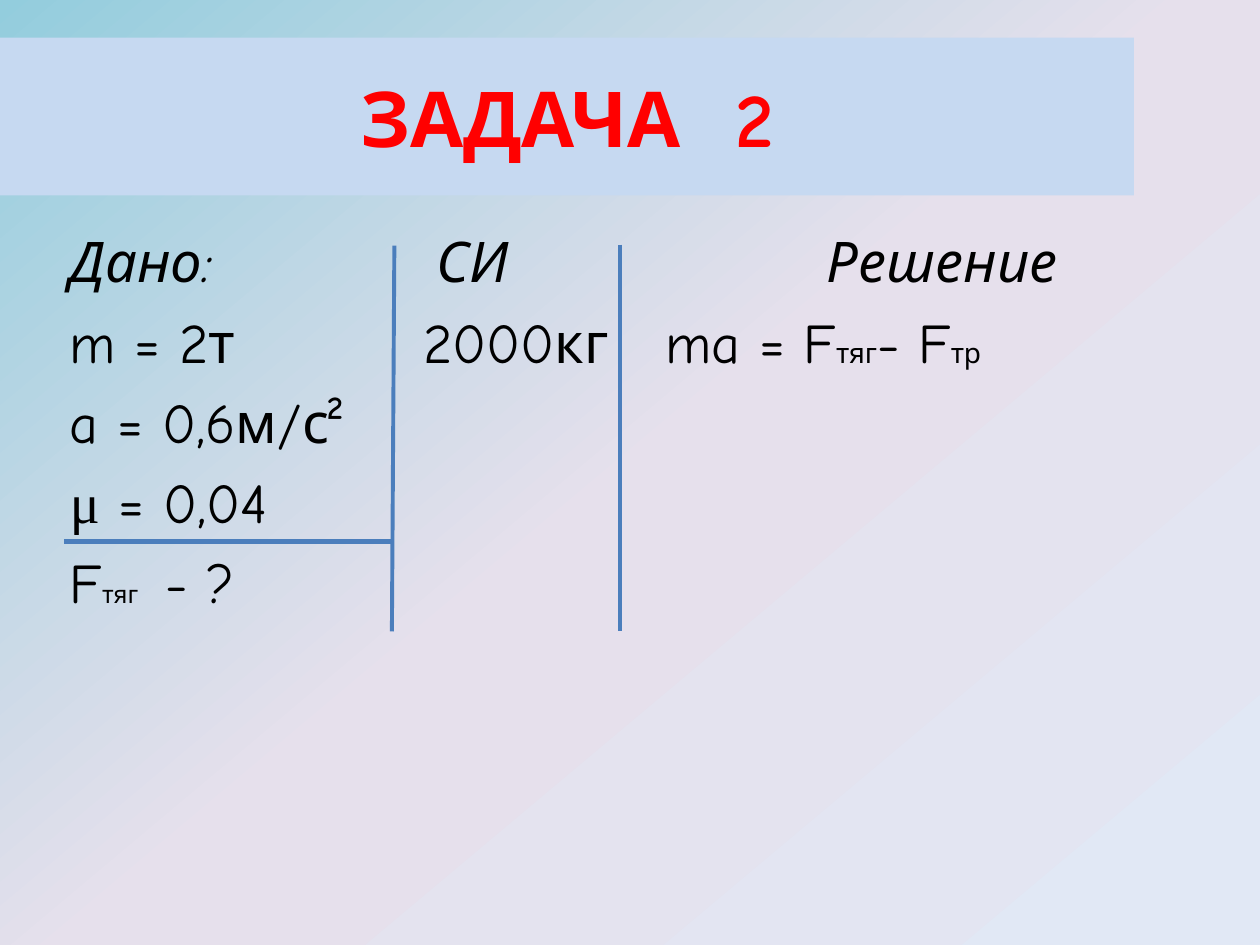
from copy import deepcopy

from lxml.etree import SubElement
from pptx import Presentation
from pptx.dml.color import RGBColor
from pptx.enum.shapes import MSO_CONNECTOR
from pptx.enum.text import MSO_ANCHOR, MSO_AUTO_SIZE, PP_ALIGN
from pptx.oxml.ns import qn
from pptx.util import Cm, Pt

COLOURS = {
    "sky": "93CDDD", "lilac": "E6E0EC", "mist": "E1E8F5",
    "band": "C6D9F1", "title": "FF0000", "text": "000000", "rule": "4B7EBC",
}
FONT = "Comic Neue"
# Each row: tab positions in cm, then spans of text with their format
ROWS = [
    ((7.4, 15.26), [("Дано:\tСИ\tРешение", {"italic": True})]),
    ((7.12, 12), [("m = 2т\t2000кг\tma = F", {}), ("тяг", {"size": 16}),
                  ("- F", {}), ("тр", {"size": 16})]),
    ((), [("a = 0,6м/с²", {})]),
    ((), [("μ", {"font": "Times New Roman"}), (" = 0,04", {})]),
    ((), [("F", {}), ("тяг ", {"size": 14}), (" - ?", {})]),
]
# Start x, start y, end x, end y in cm, then width in points
RULES = [
    (7.95, 4.95, 7.9, 12.73, 2.25),
    (12.5, 4.93, 12.5, 12.73, 2.25),
    (1.3, 10.92, 7.9, 10.92, 3),
]


def colour(name):
    return RGBColor.from_string(COLOURS[name])


def add_span(para, text, size=32, font=FONT, fill="text", bold=False, italic=False):
    span = para.add_run()
    span.text = text
    span.font.size = Pt(size)
    span.font.name = font
    span.font.bold = bold
    span.font.italic = italic
    span.font.color.rgb = colour(fill)


def set_background(page):
    fill = page.background.fill
    fill.gradient()
    stop_list = next(page._element.iter(qn("a:gsLst")))
    stop_list.append(deepcopy(stop_list[-1]))
    for stop, name, position in zip(
            fill.gradient_stops, ("sky", "lilac", "mist"), (0, 0.5, 1)):
        stop.color.rgb = colour(name)
        stop.position = position
    fill.gradient_angle = 310


def set_title(page, text):
    title = page.shapes.title
    title.left, title.top, title.width, title.height = Cm(0), Cm(0.76), Cm(22.86), Cm(3.18)
    title.fill.solid()
    title.fill.fore_color.rgb = colour("band")
    frame = title.text_frame
    frame.auto_size = MSO_AUTO_SIZE.NONE
    frame.vertical_anchor = MSO_ANCHOR.MIDDLE
    para = frame.paragraphs[0]
    para.alignment = PP_ALIGN.CENTER
    add_span(para, text, size=44, fill="title", bold=True)


def set_tabs(para, positions):
    tab_list = SubElement(para._p.get_or_add_pPr(), qn("a:tabLst"))
    for position in positions:
        SubElement(tab_list, qn("a:tab"), pos=str(Cm(position)), algn="l")


def add_problem(page):
    box = page.shapes.add_textbox(Cm(0), Cm(4.45), Cm(22.86), Cm(12.57))
    frame = box.text_frame
    frame.word_wrap = True
    frame.margin_left = Cm(1.41)
    for index, (tabs, spans) in enumerate(ROWS):
        para = frame.add_paragraph() if index else frame.paragraphs[0]
        para.space_before = Pt(7.4)
        if tabs:
            set_tabs(para, tabs)
        for text, style in spans:
            add_span(para, text, **style)


def add_rule(page, x1, y1, x2, y2, width):
    rule = page.shapes.add_connector(
        MSO_CONNECTOR.STRAIGHT, Cm(x1), Cm(y1), Cm(x2), Cm(y2))
    rule.line.color.rgb = colour("rule")
    rule.line.width = Pt(width)
    SubElement(rule._element.spPr, qn("a:effectLst"))


def main():
    deck = Presentation()
    deck.slide_width, deck.slide_height = Cm(25.4), Cm(19.05)
    page = deck.slides.add_slide(deck.slide_layouts[5])
    set_background(page)
    set_title(page, "ЗАДАЧА  2")
    add_problem(page)
    for rule in RULES:
        add_rule(page, *rule)
    deck.save("out.pptx")


if __name__ == "__main__":
    main()
